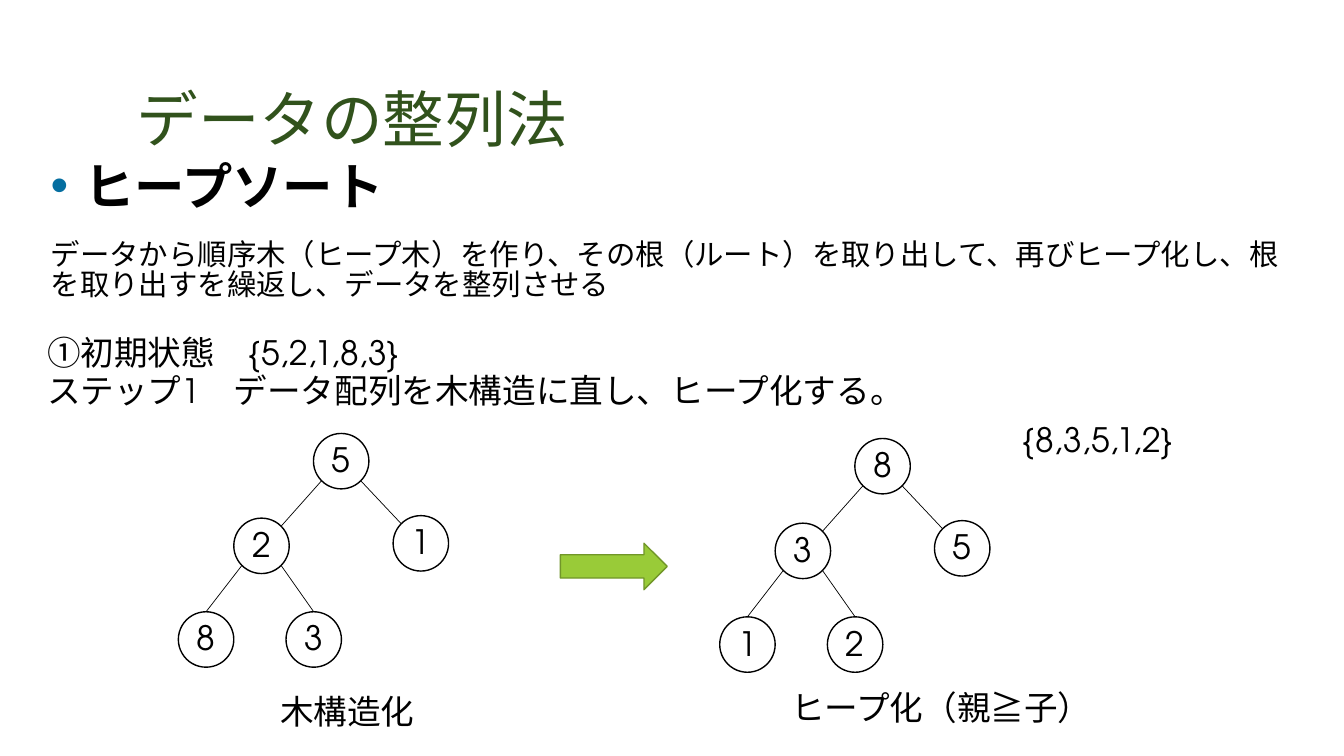
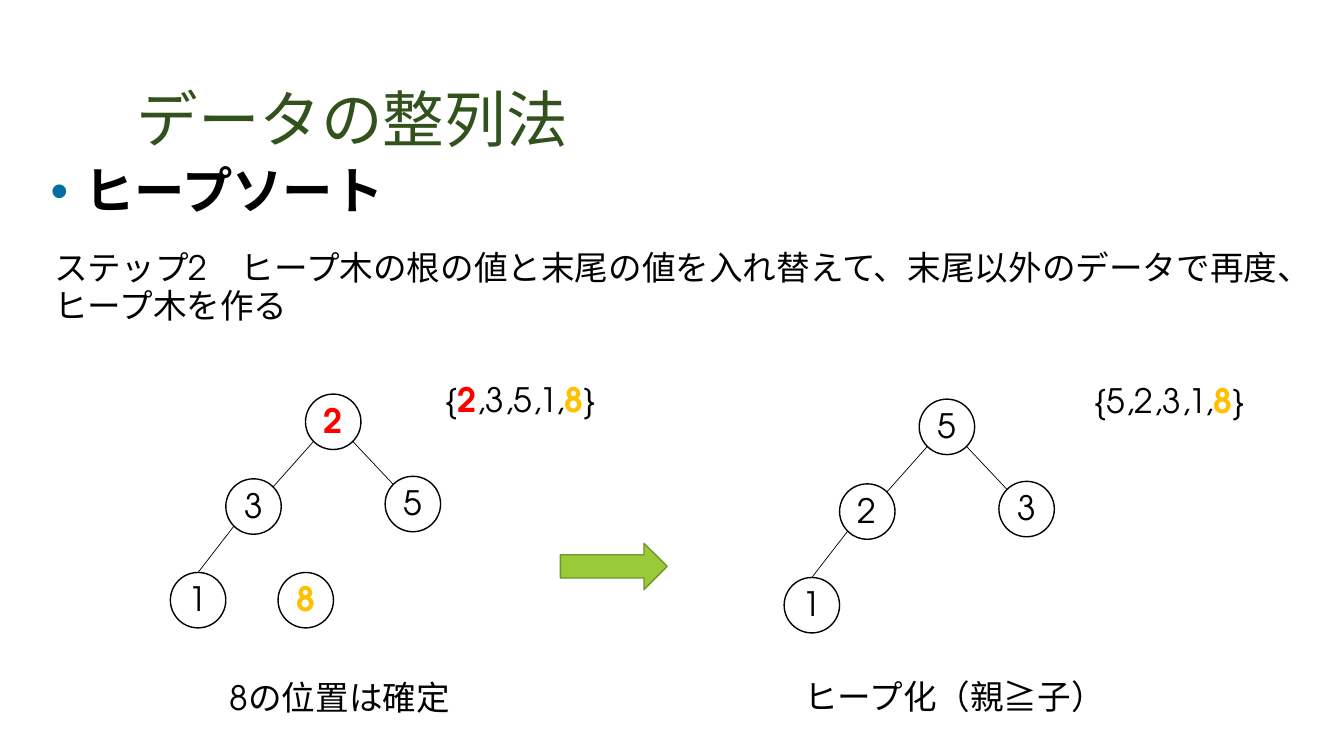
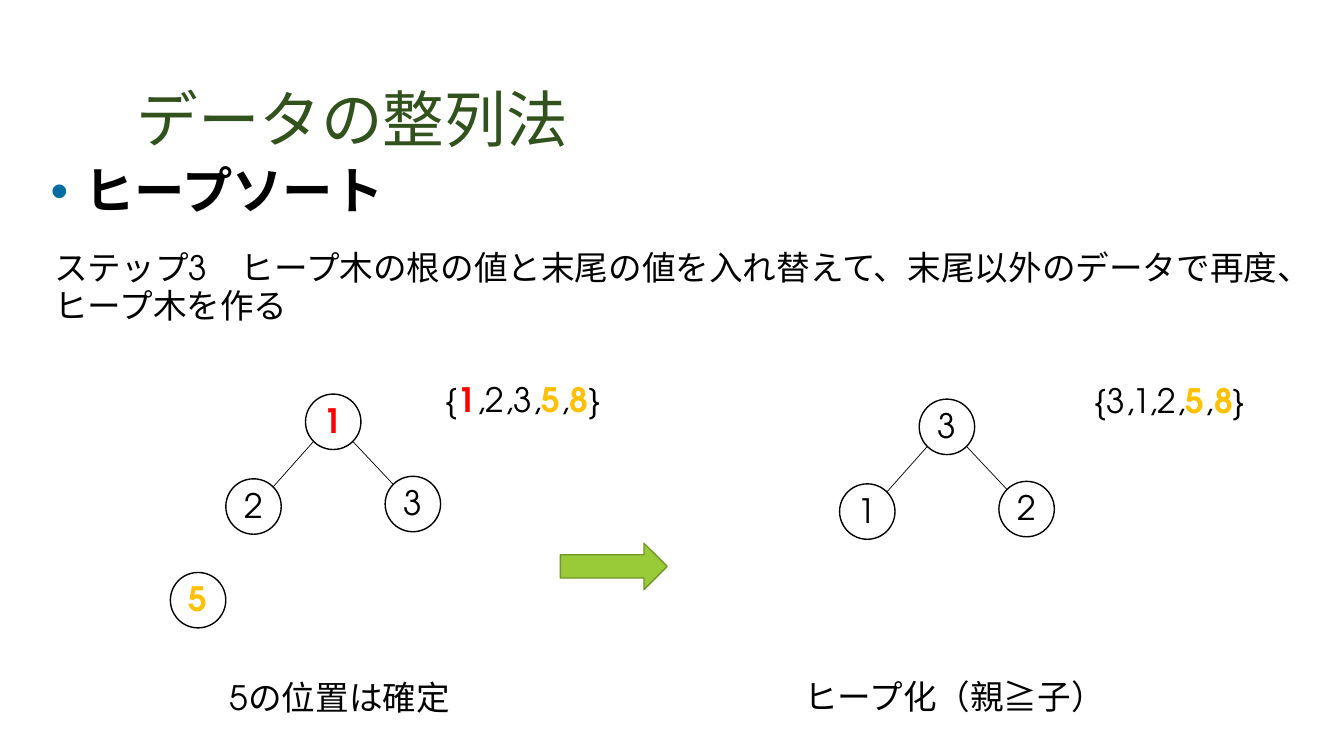
from dataclasses import dataclass
from itertools import groupby
from typing import NamedTuple, Optional

from lxml import etree
from pptx import Presentation
from pptx.dml.color import RGBColor
from pptx.enum import shapes, text
from pptx.oxml import ns
from pptx.util import Pt

BLACK = RGBColor(0x00, 0x00, 0x00)
TITLE_GREEN = RGBColor(0x31, 0x52, 0x1C)
BULLET_BLUE = RGBColor(0x05, 0x6E, 0xA0)
ARROW_FILL = RGBColor(0x99, 0xCB, 0x38)
ARROW_LINE = RGBColor(0x71, 0x96, 0x29)
SWAPPED_RED = RGBColor(0xFF, 0x00, 0x00)
SETTLED_GOLD = RGBColor(0xFF, 0xC0, 0x00)

LATIN = "TeX Gyre Adventor"
JAPANESE = "Noto Sans CJK JP"
TITLE = "データの整列法"
HEADING = "ヒープソート"
HEAPED = "ヒープ化（親≧子）"

NODE = 39.6
CORNER = NODE * 0.146
NODE_OFFSETS = [(0, 0), (-56.9, 60.5), (56.9, 58.7), (-96.5, 127.4), (-19.6, 127.4)]


class Box(NamedTuple):
    left: float
    top: float
    width: float
    height: float

    def lengths(self) -> list:
        return [Pt(value) for value in self]


class Span(NamedTuple):
    text: str
    color: RGBColor = BLACK
    bold: bool = False


@dataclass
class Heap:
    values: list[int]
    root: tuple[float, float]
    caption: str
    caption_box: Box
    array_at: Optional[tuple[float, float]] = None
    shown: int = 5
    settled: int = 0
    swapped: bool = False

    def span(self, index: int) -> Span:
        value = str(self.values[index])
        if index >= len(self.values) - self.settled:
            return Span(value, SETTLED_GOLD, True)
        if self.swapped and index == 0:
            return Span(value, SWAPPED_RED, True)
        return Span(value)

    def array_spans(self) -> list[Span]:
        pieces = [Span("{")]
        for index in range(len(self.values)):
            pieces += [Span(",")] if index else []
            pieces.append(self.span(index))
        pieces.append(Span("}"))
        groups = groupby(pieces, key=lambda piece: piece[1:])
        return [Span("".join(piece.text for piece in group), *style) for style, group in groups]


@dataclass
class Step:
    paragraphs: list[str]
    text_box: Box
    heaps: list[Heap]
    summary: str = ""


def add_spans(paragraph, spans: list[Span], size: float = 24, font: str = LATIN,
              spacing: float = 0.95) -> None:
    paragraph.line_spacing = spacing
    for span in spans:
        run = paragraph.add_run()
        run.text = span.text
        run.font.size = Pt(size)
        run.font.name = font
        run.font.bold = span.bold
        run.font.color.rgb = span.color
        east_asian = etree.Element(ns.qn("a:ea"), typeface=JAPANESE)
        run.font._element.find(ns.qn("a:latin")).addnext(east_asian)


def add_label(slide, box: Box, paragraphs: list[list[Span]]) -> None:
    frame = slide.shapes.add_textbox(*box.lengths()).text_frame
    frame.word_wrap = True
    for index, spans in enumerate(paragraphs):
        paragraph = frame.add_paragraph() if index else frame.paragraphs[0]
        add_spans(paragraph, spans)


def place(placeholder, box: Box, anchor):
    placeholder.left, placeholder.top, placeholder.width, placeholder.height = box.lengths()
    frame = placeholder.text_frame
    frame.auto_size = text.MSO_AUTO_SIZE.NONE
    frame.word_wrap = True
    frame.vertical_anchor = anchor
    frame.margin_left = frame.margin_right = Pt(9.6)
    frame.margin_top = frame.margin_bottom = Pt(4.8)
    return frame


def set_bullet(paragraph, bulleted: bool) -> None:
    properties = paragraph._p.get_or_add_pPr()
    indent = Pt(24) if bulleted else 0
    properties.set("marL", str(indent))
    properties.set("indent", str(-indent))
    if bulleted:
        color = etree.SubElement(properties, ns.qn("a:buClr"))
        etree.SubElement(color, ns.qn("a:srgbClr"), val=str(BULLET_BLUE))
        etree.SubElement(properties, ns.qn("a:buFont"), typeface="Arial")
        etree.SubElement(properties, ns.qn("a:buChar"), char="•")
    else:
        etree.SubElement(properties, ns.qn("a:buNone"))


def add_headings(slide, summary: str) -> None:
    title = place(slide.shapes.title, Box(88, 5.8, 800, 110), text.MSO_ANCHOR.BOTTOM)
    title.paragraphs[0].alignment = text.PP_ALIGN.LEFT
    add_spans(title.paragraphs[0], [Span(TITLE, TITLE_GREEN)], 44, JAPANESE, 0.85)

    body_box = Box(26.6, 112.3, 907, 110 if summary else 54.7)
    body = place(slide.placeholders[1], body_box, text.MSO_ANCHOR.TOP)
    lines = [(Span(HEADING, bold=True), 36)]
    if summary:
        lines.append((Span(summary), 21))
    for index, (span, size) in enumerate(lines):
        paragraph = body.add_paragraph() if index else body.paragraphs[0]
        paragraph.space_before = Pt(18.7)
        add_spans(paragraph, [span], size, JAPANESE, 0.85 if summary else 0.95)
        set_bullet(paragraph, index == 0)


def add_node(group, left: float, top: float, span: Span):
    node = group.shapes.add_shape(shapes.MSO_SHAPE.OVAL, *Box(left, top, NODE, NODE).lengths())
    node.shadow.inherit = False
    node.fill.background()
    node.line.color.rgb = BLACK
    node.line.width = Pt(1)
    frame = node.text_frame
    frame.margin_left = frame.margin_right = frame.margin_top = frame.margin_bottom = 0
    frame.word_wrap = False
    frame.vertical_anchor = text.MSO_ANCHOR.MIDDLE
    frame.paragraphs[0].alignment = text.PP_ALIGN.CENTER
    add_spans(frame.paragraphs[0], [span])
    return node


def add_branch(group, parent, child, is_left: bool, is_leaf: bool) -> None:
    near, far = Pt(CORNER), Pt(NODE - CORNER)
    branch = group.shapes.add_connector(
        shapes.MSO_CONNECTOR.STRAIGHT,
        parent.left + (near if is_left else far), parent.top + far,
        child.left + (far if is_left else near), child.top + near)
    if is_leaf:
        branch.end_connect(child, 0)
    branch.line.color.rgb = BLACK
    branch.line.width = Pt(0.5)
    etree.SubElement(branch._element.spPr, ns.qn("a:effectLst"))


def add_heap(slide, heap: Heap) -> None:
    group = slide.shapes.add_group_shape()
    left, top = heap.root
    nodes = [add_node(group, left + across, top + down, heap.span(index))
             for index, (across, down) in enumerate(NODE_OFFSETS[:heap.shown])]
    linked = min(heap.shown, len(heap.values) - heap.settled)
    for index in range(1, linked):
        add_branch(group, nodes[(index - 1) // 2], nodes[index], index % 2 == 1, index > 2)
    add_label(slide, heap.caption_box, [[Span(heap.caption)]])
    if heap.array_at:
        add_label(slide, Box(*heap.array_at, 130, 35), [heap.array_spans()])


def add_arrow(slide) -> None:
    arrow = slide.shapes.add_shape(shapes.MSO_SHAPE.RIGHT_ARROW,
                                   *Box(400.3, 388, 76.3, 33.2).lengths())
    arrow.shadow.inherit = False
    arrow.fill.solid()
    arrow.fill.fore_color.rgb = ARROW_FILL
    arrow.line.color.rgb = ARROW_LINE
    arrow.line.width = Pt(1)


def swap_step(number: int, before: list[int], after: list[int]) -> Step:
    settled = number - 1
    last = before[-settled]
    return Step(
        [f"ステップ{number}　ヒープ木の根の値と末尾の値を入れ替えて、末尾以外のデータで再度、ヒープ木を作る"],
        Box(31.7, 175, 890, 63),
        [Heap(before, (218.2, 281.5), f"{last}の位置は確定", Box(157, 482.4, 193, 35),
              (311, 269.3), 6 - settled, settled, True),
         Heap(after, (656.6, 285.1), HEAPED, Box(567.4, 481.7, 257, 35),
              (774.7, 269.6), 5 - settled, settled)])


STEPS = [
    Step(["①初期状態　{5,2,1,8,3}", "ステップ1　データ配列を木構造に直し、ヒープ化する。"],
         Box(26.6, 235.4, 890, 63),
         [Heap([5, 2, 1, 8, 3], (223.9, 309.6), "木構造化", Box(193, 491.8, 193, 35)),
          Heap([8, 3, 5, 1, 2], (610.6, 313.2), HEAPED, Box(558, 488.9, 257, 35),
               (723.6, 298.1))],
         "データから順序木（ヒープ木）を作り、その根（ルート）を取り出して、"
         "再びヒープ化し、根を取り出すを繰返し、データを整列させる"),
    swap_step(2, [2, 3, 5, 1, 8], [5, 2, 3, 1, 8]),
    swap_step(3, [1, 2, 3, 5, 8], [3, 1, 2, 5, 8]),
]


def main() -> None:
    presentation = Presentation()
    presentation.slide_width, presentation.slide_height = Pt(960), Pt(540)
    for step in STEPS:
        slide = presentation.slides.add_slide(presentation.slide_layouts[1])
        add_headings(slide, step.summary)
        add_label(slide, step.text_box, [[Span(line)] for line in step.paragraphs])
        for heap in step.heaps:
            add_heap(slide, heap)
        add_arrow(slide)
    presentation.save("out.pptx")


if __name__ == "__main__":
    main()
